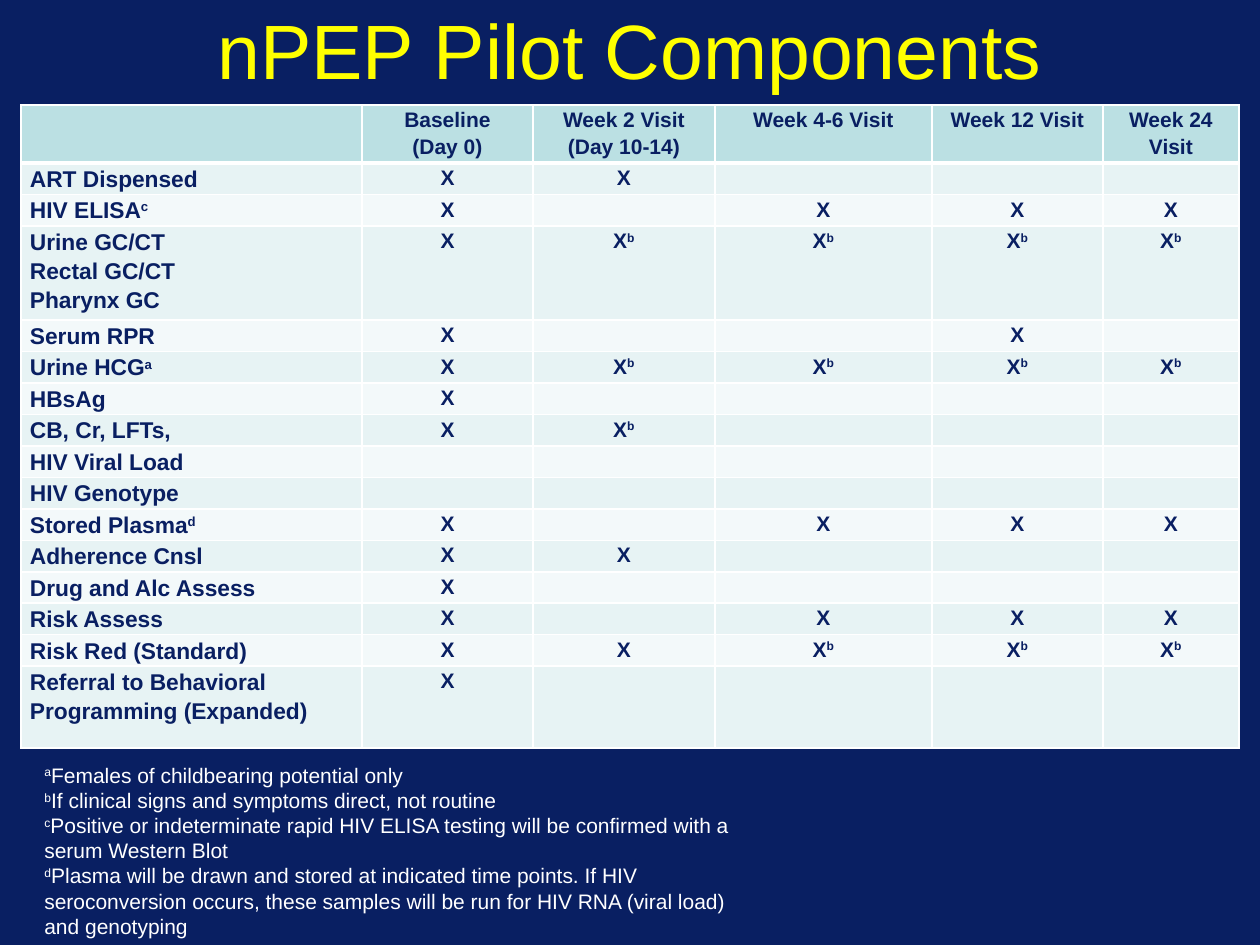
from lxml.etree import SubElement
from pptx import Presentation
from pptx.dml.color import RGBColor
from pptx.enum.text import MSO_ANCHOR as Anchor, MSO_AUTO_SIZE as Fit, PP_ALIGN as Align
from pptx.oxml.ns import qn
from pptx.util import Pt

PX = 914400 / 126
NAVY = RGBColor(0x09, 0x1F, 0x62)
YELLOW = RGBColor(0xFF, 0xFF, 0x00)
WHITE = RGBColor(0xFF, 0xFF, 0xFF)
TEAL = RGBColor(0xBB, 0xE0, 0xE3)
BANDS = [RGBColor(0xE7, 0xF3, 0xF4), RGBColor(0xF3, 0xF9, 0xFA)]

TITLE = "nPEP Pilot Components"
HEADS = ["", "Baseline\n(Day 0)", "Week 2 Visit\n(Day 10-14)",
         "Week 4-6 Visit", "Week 12 Visit", "Week 24 Visit"]
B = "X^b^"
TESTS = [
    ("ART Dispensed", "X", "X", "", "", ""),
    ("HIV ELISA^c^", "X", "", "X", "X", "X"),
    ("Urine GC/CT\nRectal GC/CT\nPharynx GC", "X", B, B, B, B),
    ("Serum RPR", "X", "", "", "X", ""),
    ("Urine HCG^a^", "X", B, B, B, B),
    ("HBsAg", "X", "", "", "", ""),
    ("CB, Cr, LFTs,", "X", B, "", "", ""),
    ("HIV Viral Load", "", "", "", "", ""),
    ("HIV Genotype", "", "", "", "", ""),
    ("Stored Plasma^d^", "X", "", "X", "X", "X"),
    ("Adherence Cnsl", "X", "X", "", "", ""),
    ("Drug and Alc Assess", "X", "", "", "", ""),
    ("Risk Assess", "X", "", "X", "X", "X"),
    ("Risk Red (Standard)", "X", "X", B, B, B),
    ("Referral to Behavioral Programming (Expanded)", "X", "", "", "", ""),
]
NOTES = "\n".join([
    "^a^Females of childbearing potential only",
    "^b^If clinical signs and symptoms direct, not routine",
    "^c^Positive or indeterminate rapid HIV ELISA testing will be confirmed "
    "with a serum Western Blot",
    "^d^Plasma will be drawn and stored at indicated time points. If HIV "
    "seroconversion occurs, these samples will be run for HIV RNA (viral load) "
    "and genotyping",
])
COLS = [341, 171, 182, 217, 171, 136]
ROWS = [55, 30, 30, 90] + [30] * 11 + [82]


def px(*vals):
    return [round(v * PX) for v in vals]


def put(obj, vals):
    for key, val in vals.items():
        setattr(obj, key, val)


def write(frame, text, size, color, bold=False, **form):
    for num, line in enumerate(text.split("\n")):
        para = frame.add_paragraph() if num else frame.paragraphs[0]
        put(para, form)
        for odd, part in enumerate(line.split("^")):
            if part:
                run = para.add_run()
                run.text = part
                put(run.font, {"name": "Arial", "size": Pt(size), "bold": bold})
                run.font.color.rgb = color
                if odd % 2:
                    run.font._element.set("baseline", "30000")
        if not line:
            SubElement(para._p, qn("a:endParaRPr"), sz=str(size * 100))


def add_box(slide, area, text, size, color, frame_form, **form):
    frame = slide.shapes.add_textbox(*px(*area)).text_frame
    put(frame, {"word_wrap": True, **frame_form})
    write(frame, text, size, color, **form)


def edge(cell, sides):
    props = cell._tc.get_or_add_tcPr()
    for side, wide in sides.items():
        line = SubElement(props, qn("a:ln" + side), w=str(Pt(wide)))
        fill = SubElement(line, qn("a:solidFill"))
        SubElement(fill, qn("a:srgbClr"), val=str(WHITE))


def add_grid(slide):
    data = [HEADS] + TESTS
    area = px(21, 105, sum(COLS), sum(ROWS))
    table = slide.shapes.add_table(len(ROWS), len(COLS), *area).table
    for col, wide in zip(table.columns, px(*COLS)):
        col.width = wide
    for row, high in zip(table.rows, px(*ROWS)):
        row.height = high
    side = px(9)[0]
    pad = {"margin_left": side, "margin_right": side,
           "margin_top": 0, "margin_bottom": 0}
    for r, texts in enumerate(data):
        for c, text in enumerate(texts):
            cell = table.cell(r, c)
            put(cell, pad)
            edge(cell, {"L": 1, "R": 1, "T": 3 if r == 1 else 1,
                        "B": 1 if r else 3})
            cell.fill.solid()
            cell.fill.fore_color.rgb = BANDS[(r - 1) % 2] if r else TEAL
            label = r > 0 and c == 0
            write(cell.text_frame, text, 13 if label else 12, NAVY, True,
                  alignment=Align.LEFT if label else Align.CENTER,
                  line_spacing=1.15)


def main():
    """Build the nPEP pilot components slide."""
    deck = Presentation()
    deck.slide_width, deck.slide_height = px(1260, 945)
    slide = deck.slides.add_slide(deck.slide_layouts[6])
    slide.background.fill.solid()
    slide.background.fill.fore_color.rgb = NAVY
    add_box(slide, (63, 10, 1134, 78), TITLE, 44, YELLOW,
            {"vertical_anchor": Anchor.MIDDLE}, alignment=Align.CENTER)
    add_grid(slide)
    add_box(slide, (32, 756, 746, 229), NOTES, 12, WHITE,
            {"auto_size": Fit.SHAPE_TO_FIT_TEXT})
    deck.save("out.pptx")


if __name__ == "__main__":
    main()
